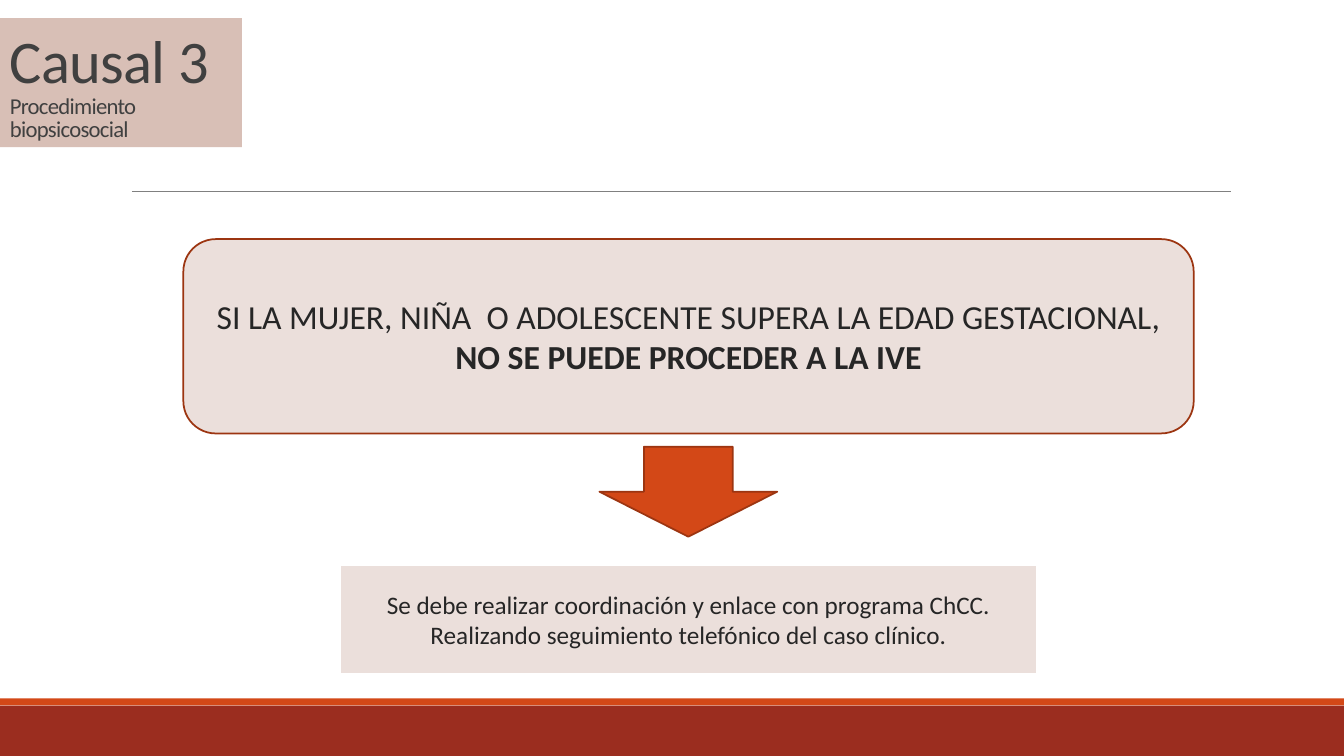
from dataclasses import dataclass

from lxml import etree
from pptx import Presentation
from pptx.dml.color import RGBColor
from pptx.enum import shapes, text
from pptx.oxml import ns
from pptx.util import Pt


@dataclass(frozen=True)
class Theme:
    font: str = "Calibri"
    brick: str = "9B2D1F"
    orange: str = "D34817"
    outline: str = "9C3511"
    rose: str = "D8BFB6"
    pale: str = "EBDFDB"
    white: str = "FFFFFF"
    rule: str = "808080"
    title_ink: str = "404040"
    ink: str = "262626"
    title_size: float = 43.2
    subtitle_size: float = 16.2
    warning_size: float = 24
    action_size: float = 18


theme = Theme()
SHAPE = shapes.MSO_SHAPE


def add_block(kind, place, fill, line=None):
    box = slide.shapes.add_shape(kind, *(Pt(value) for value in place))
    box.shadow.inherit = False
    box.fill.solid()
    box.fill.fore_color.rgb = RGBColor.from_string(fill)
    if line:
        box.line.color.rgb = RGBColor.from_string(line)
        box.line.width = Pt(1.25)
    else:
        box.line.fill.background()
    return box


def add_span(para, words, size, color, bold=False):
    span = para.add_run()
    span.text = words
    formats = {"name": theme.font, "size": Pt(size), "bold": bold}
    for name, value in formats.items():
        setattr(span.font, name, value)
    span.font.color.rgb = RGBColor.from_string(color)
    return span


deck = Presentation()
deck.slide_width, deck.slide_height = Pt(960), Pt(540)
slide = deck.slides.add_slide(deck.slide_layouts[6])

# Footer bands and header rule
add_block(SHAPE.RECTANGLE, (0, 504, 960, 36), theme.brick)
add_block(SHAPE.RECTANGLE, (0, 498.8, 960, 5.1), theme.orange)
rule = slide.shapes.add_connector(
    shapes.MSO_CONNECTOR.STRAIGHT, Pt(94.3), Pt(136.6), Pt(879), Pt(136.6))
rule.line.color.rgb = RGBColor.from_string(theme.rule)
rule.line.width = Pt(0.5)
etree.SubElement(rule._element.spPr, ns.qn("a:effectLst"))

# Title
title = add_block(SHAPE.RECTANGLE, (0, 12.9, 172.8, 92.2), theme.rose)
title.text_frame.vertical_anchor = text.MSO_ANCHOR.BOTTOM
para = title.text_frame.paragraphs[0]
para.alignment = text.PP_ALIGN.LEFT
para.line_spacing = 0.85
heading = add_span(para, "Causal 3 ", theme.title_size, theme.title_ink)
para.add_line_break()
subtitle = add_span(para, "Procedimiento biopsicosocial",
                    theme.subtitle_size, theme.title_ink)
for span in (heading, subtitle):
    span.font._element.set("spc", "-50")

# Flow: warning, arrow, action
warning = add_block(SHAPE.ROUNDED_RECTANGLE, (131, 170.8, 721.7, 138.8),
                    theme.pale, theme.outline)
add_block(SHAPE.DOWN_ARROW, (428.2, 319.1, 127, 64.3), theme.orange, theme.outline)
action = add_block(SHAPE.RECTANGLE, (243, 403.6, 497.6, 77.4), theme.pale, theme.white)

messages = [
    (warning, theme.warning_size, [
        ("SI LA MUJER, NIÑA  O ADOLESCENTE SUPERA LA EDAD GESTACIONAL, ", False),
        ("NO SE PUEDE PROCEDER A LA IVE", True)]),
    (action, theme.action_size, [
        ("Se debe realizar coordinación y enlace con programa ChCC. "
         "Realizando seguimiento telefónico del caso clínico.", False)]),
]
for box, size, spans in messages:
    box.text_frame.vertical_anchor = text.MSO_ANCHOR.MIDDLE
    para = box.text_frame.paragraphs[0]
    para.alignment = text.PP_ALIGN.CENTER
    for words, bold in spans:
        add_span(para, words, size, theme.ink, bold)

deck.save("out.pptx")
